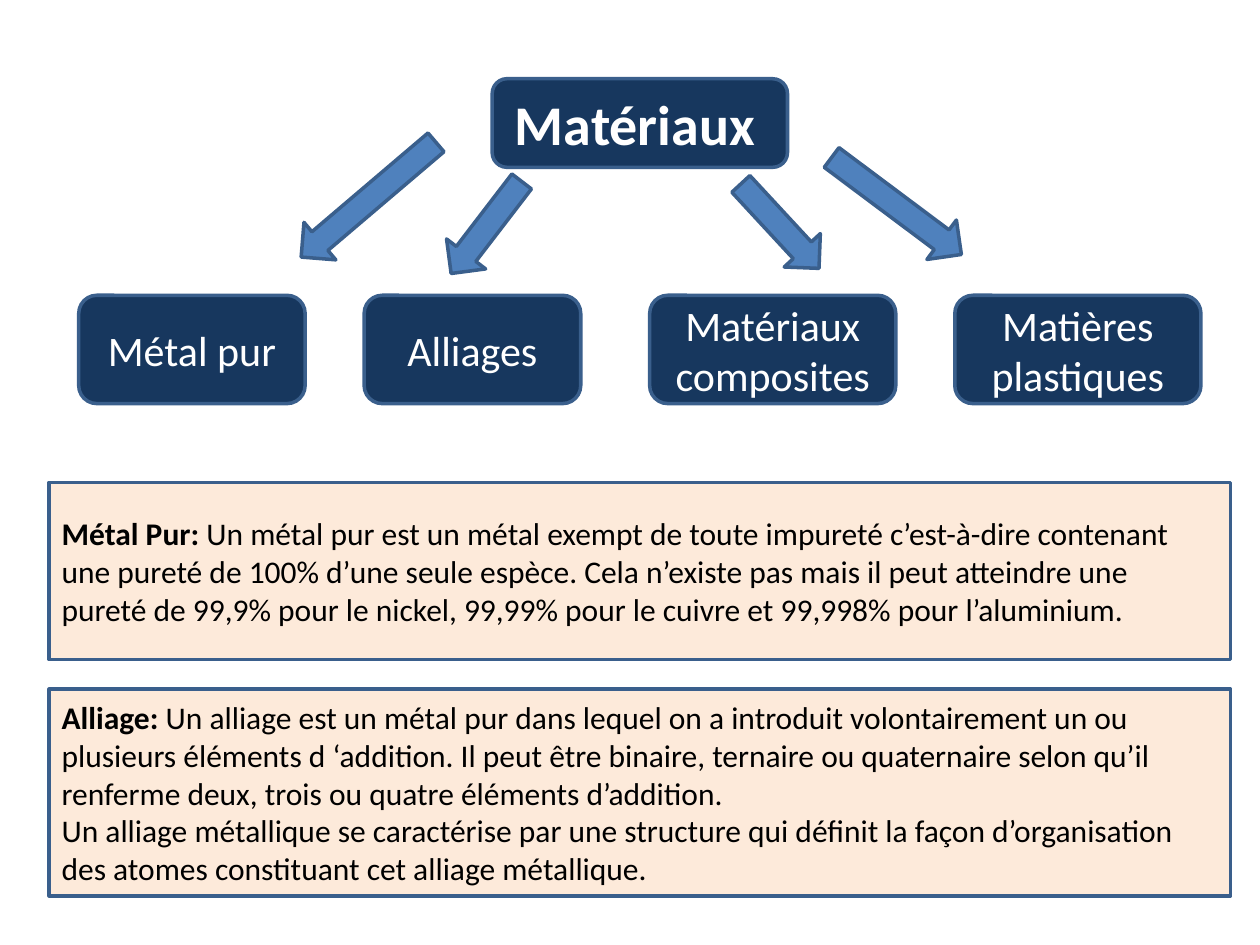
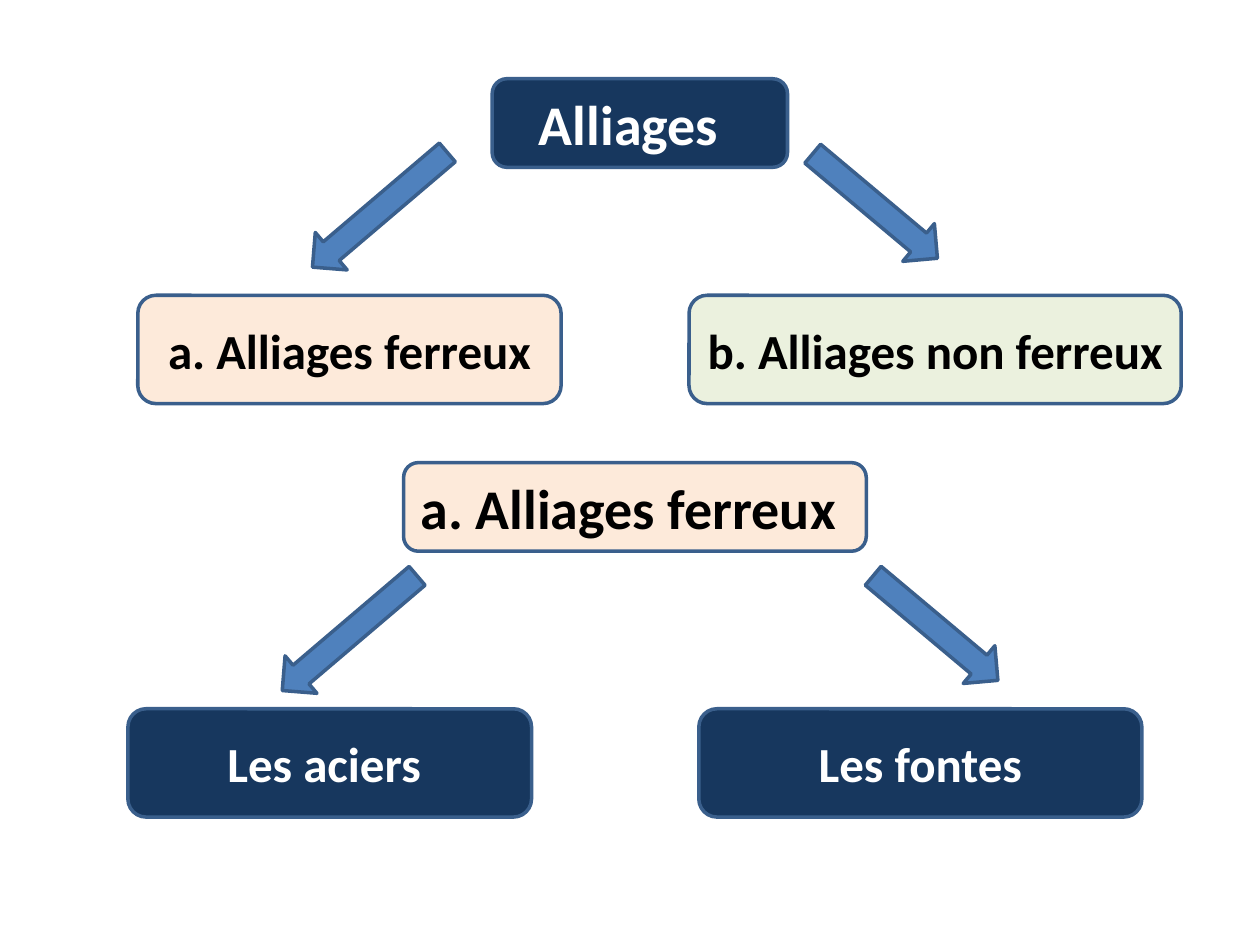
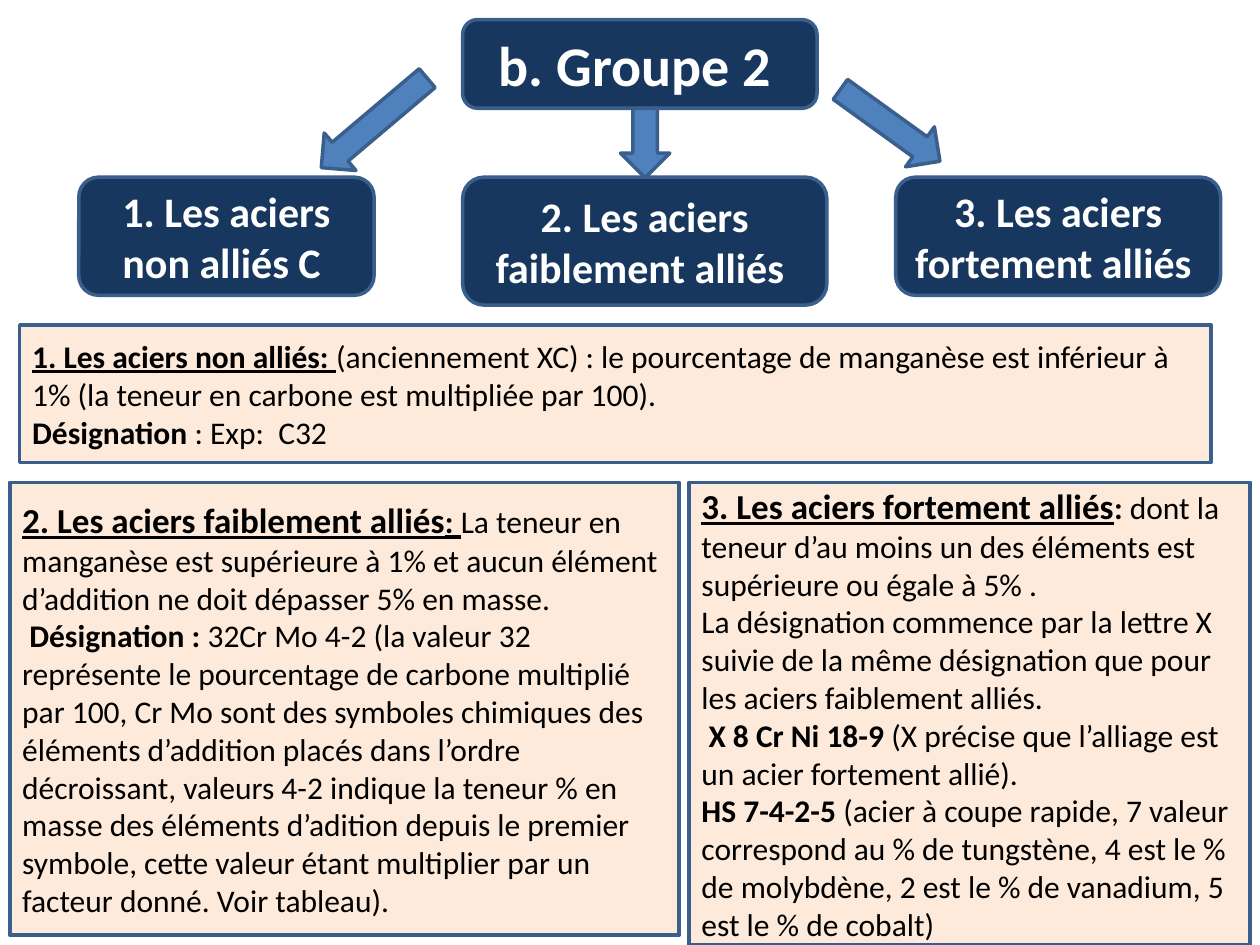
from math import atan2, degrees, hypot

from pptx import Presentation
from pptx.dml.color import RGBColor
from pptx.enum.shapes import MSO_SHAPE as SHAPE
from pptx.enum.text import MSO_ANCHOR as ANCHOR, PP_ALIGN as ALIGN
from pptx.util import Inches, Pt

WIDTH, HEIGHT = 10, 7.5
COLS = 128
CELL = WIDTH / COLS
ARROW_THICKNESS = 5 * CELL
FONT = "Calibri"
COLORS = {"navy": "17375E", "blue": "4F81BD", "outline": "3A5F8C", "peach": "FDEADA",
          "green": "EBF1DE", "white": "FFFFFF", "black": "000000"}

BOLD = {"bold": True}
HEAD = {"bold": True, "underline": True}
BIG_HEAD = {**HEAD, "size": 20}
TITLE = {"bold": True, "size": 32}
BRANCH = {"bold": True, "size": 28}
STEEL = {"bold": True, "size": 24}
PLAIN = {"size": 24}
TITLE_END = (" ", PLAIN)

# Boxes: (column, row, columns, rows), fill, runs.
# Arrows: tail and tip in inches.
# Definitions: (column, row, columns, rows), paragraphs made of runs.
SLIDES = [
    {
        "boxes": [
            ((50, 8, 30, 9), "navy", [("Matériaux", TITLE), TITLE_END]),
            ((8, 30, 23, 11), "navy", [("Métal pur", PLAIN)]),
            ((37, 30, 22, 11), "navy", [("Alliages", PLAIN)]),
            ((66, 30, 25, 11), "navy", [("Matériaux composites", PLAIN)]),
            ((97, 30, 25, 11), "navy", [("Matières plastiques", PLAIN)]),
        ],
        "arrows": [
            ((3.46, 1.13), (2.39, 2.04)),
            ((4.14, 1.44), (3.58, 2.17)),
            ((5.88, 1.46), (6.50, 2.13)),
            ((6.60, 1.25), (7.63, 2.02)),
        ],
        "definitions": [
            ((5, 49, 120, 18), [[
                ("Métal Pur: ", BOLD),
                ("Un métal pur est un métal exempt de toute impureté c’est-à-dire contenant "
                 "une pureté de 100% d’une seule espèce. Cela n’existe pas mais il peut "
                 "atteindre une pureté de 99,9% pour le nickel, 99,99% pour le cuivre et "
                 "99,998% pour l’aluminium.", {}),
            ]]),
            ((5, 70, 120, 21), [[
                ("Alliage: ", BOLD),
                ("Un alliage est un métal pur dans lequel on a introduit volontairement un ou\n"
                 "plusieurs éléments d ‘addition. Il peut être binaire, ternaire ou quaternaire "
                 "selon qu’il renferme deux, trois ou quatre éléments d’addition.", {}),
            ], [
                ("Un alliage métallique se caractérise par une structure qui définit la façon "
                 "d’organisation des atomes constituant cet alliage métallique.", {}),
            ]]),
        ],
    },
    {
        "boxes": [
            ((50, 8, 30, 9), "navy", [("Alliages ", TITLE), TITLE_END]),
            ((14, 30, 43, 11), "peach", [("a. Alliages ferreux", BRANCH)]),
            ((70, 30, 50, 11), "green", [("b. Alliages non ferreux", BRANCH)]),
            ((41, 47, 47, 9), "peach", [("a. Alliages ferreux ", TITLE), TITLE_END]),
            ((13, 72, 41, 11), "navy", [("Les aciers ", BRANCH)]),
            ((71, 72, 45, 11), "navy", [("Les fontes", BRANCH)]),
        ],
        "arrows": [
            ((3.55, 1.21), (2.48, 2.12)),
            ((6.45, 1.22), (7.44, 2.05)),
            ((3.31, 4.57), (2.24, 5.48)),
            ((6.93, 4.57), (7.92, 5.40)),
        ],
        "definitions": [],
    },
    {
        "boxes": [
            ((47, 2, 36, 9), "navy", [("b. Groupe 2", TITLE), TITLE_END]),
            ((8, 18, 30, 12), "navy", [("1. Les aciers non alliés C ", STEEL)]),
            ((47, 18, 37, 13), "navy", [("2. Les aciers faiblement alliés ", STEEL)]),
            ((91, 18, 33, 12), "navy", [("3. Les aciers fortement alliés ", STEEL)]),
        ],
        "arrows": [
            ((3.39, 0.62), (2.55, 1.33)),
            ((5.12, 0.86), (5.12, 1.41)),
            ((6.67, 0.71), (7.46, 1.28)),
        ],
        "definitions": [
            ((2, 33, 121, 14), [[
                ("1. Les aciers non alliés: ", HEAD),
                ("(anciennement XC) : le pourcentage de manganèse est inférieur à 1% "
                 "(la teneur en carbone est multipliée par 100).", {}),
            ], [
                ("Désignation ", BOLD),
                (": Exp:  C32", {}),
            ]]),
            ((1, 49, 68, 46), [[
                ("2. Les aciers faiblement alliés", BIG_HEAD),
                (": ", HEAD),
                ("La teneur en manganèse est supérieure à 1% et aucun élément d’addition ne "
                 "doit dépasser 5% en masse. \n ", {}),
                ("Désignation :", BOLD),
                (" 32Cr Mo 4-2 (la valeur 32 représente le pourcentage de carbone multiplié "
                 "par 100, Cr Mo sont des symboles chimiques des éléments d’addition placés "
                 "dans l’ordre décroissant, valeurs 4-2 indique la teneur % en masse des "
                 "éléments d’adition depuis le premier symbole, cette valeur étant multiplier "
                 "par un facteur donné. Voir tableau).", {}),
            ]]),
            ((70, 49, 57, 47), [[
                ("3. Les aciers fortement alliés", BIG_HEAD),
                (": ", BOLD),
                ("dont la teneur d’au moins un des éléments est supérieure ou égale à 5% .\n"
                 "La désignation commence par la lettre X suivie de la même désignation que "
                 "pour les aciers faiblement alliés. \n", {}),
                (" X 8 Cr Ni 18-9 ", BOLD),
                ("(X précise que l’alliage est un acier fortement allié).\n", {}),
                ("HS 7-4-2-5 ", BOLD),
                ("(acier à coupe rapide, 7 valeur correspond au % de tungstène, 4 est le % de "
                 "molybdène, 2 est le % de vanadium, 5 est le % de cobalt)", {}),
            ]]),
        ],
    },
]


def rgb(name):
    return RGBColor.from_string(COLORS[name])


def add_text(p, text, size=18, color="black", bold=False, underline=False):
    """Append a run to p, turning each newline into a line break."""
    for i, line in enumerate(text.split("\n")):
        if i:
            p.add_line_break()
        if line:
            r = p.add_run()
            r.text = line
            r.font.name, r.font.size = FONT, Pt(size)
            r.font.bold, r.font.underline = bold, underline
            r.font.color.rgb = rgb(color)


def add_shape(slide, kind, left, top, width, height, fill):
    sp = slide.shapes.add_shape(kind, *map(Inches, (left, top, width, height)))
    sp.shadow.inherit = False
    sp.fill.solid()
    sp.fill.fore_color.rgb = rgb(fill)
    sp.line.color.rgb = rgb("outline")
    sp.line.width = Pt(2)
    return sp


def add_panel(slide, kind, cells, fill, paragraphs, align):
    sp = add_shape(slide, kind, *(n * CELL for n in cells), fill)
    tf = sp.text_frame
    tf.word_wrap = True
    tf.vertical_anchor = ANCHOR.MIDDLE
    color = "white" if fill == "navy" else "black"
    for i, runs in enumerate(paragraphs):
        p = tf.add_paragraph() if i else tf.paragraphs[0]
        p.alignment = align
        for text, style in runs:
            add_text(p, text, color=color, **style)


def add_arrow(slide, tail, tip):
    """Lay a block arrow along the line from tail to tip."""
    (x1, y1), (x2, y2) = tail, tip
    length = hypot(x2 - x1, y2 - y1)
    sp = add_shape(slide, SHAPE.RIGHT_ARROW, (x1 + x2 - length) / 2,
                   (y1 + y2 - ARROW_THICKNESS) / 2, length, ARROW_THICKNESS, "blue")
    sp.rotation = degrees(atan2(y2 - y1, x2 - x1))


def main():
    prs = Presentation()
    prs.slide_width, prs.slide_height = Inches(WIDTH), Inches(HEIGHT)
    for content in SLIDES:
        slide = prs.slides.add_slide(prs.slide_layouts[6])
        for cells, fill, runs in content["boxes"]:
            add_panel(slide, SHAPE.FLOWCHART_ALTERNATE_PROCESS, cells, fill, [runs], ALIGN.CENTER)
        for tail, tip in content["arrows"]:
            add_arrow(slide, tail, tip)
        for cells, paragraphs in content["definitions"]:
            add_panel(slide, SHAPE.FLOWCHART_PROCESS, cells, "peach", paragraphs, ALIGN.LEFT)
    prs.save("out.pptx")


if __name__ == "__main__":
    main()
